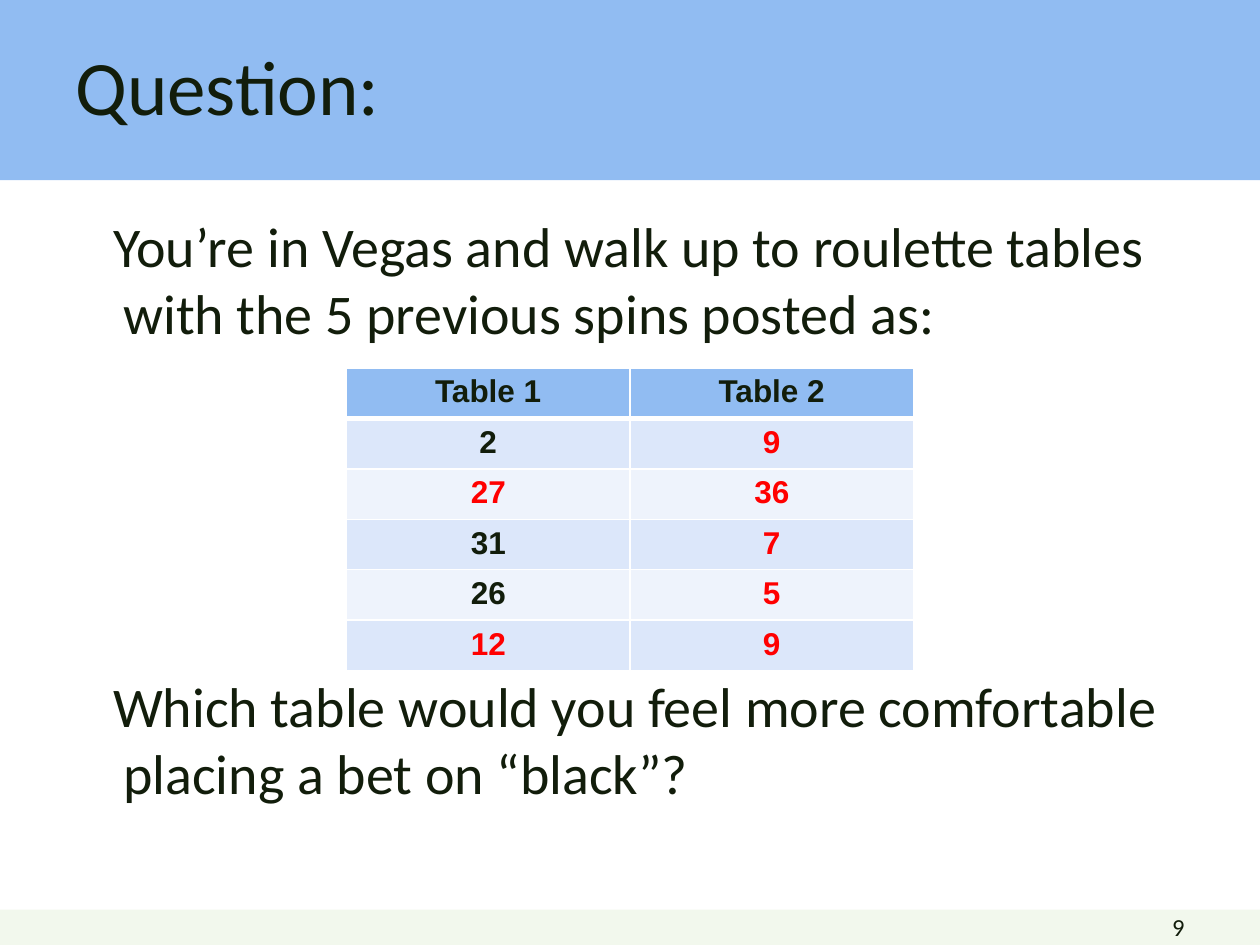
"""Build the roulette question slide with its table of previous spins."""
from lxml import etree
from pptx import Presentation
from pptx import util as u
from pptx.dml.color import RGBColor
from pptx.enum import shapes, text
from pptx.oxml.ns import qn

INK, RED, BLUE, WHITE = "121D0B", "FF0000", "91BCF2", "FFFFFF"
BANDS = ["DCE7FA", "EEF3FC"]


def paint(fmt, color):
    """Give a fill a solid colour."""
    fmt.solid()
    fmt.fore_color.rgb = RGBColor.from_string(color)


def style(p, size, font="Calibri", color=INK, bold=False):
    """Format every run of a paragraph."""
    for r in p.runs:
        r.font.size = u.Pt(size)
        r.font.name = font
        r.font.bold = bold
        paint(r.font.fill, color)


prs = Presentation()
prs.slide_width, prs.slide_height = u.Inches(10), u.Inches(7.5)
s = prs.slides.add_slide(prs.slide_layouts[6])
paint(s.background.fill, WHITE)

for top, height, color in [(0, 1.43, BLUE), (7.22, 0.28, "F2F8ED")]:
    sp = s.shapes.add_shape(shapes.MSO_SHAPE.RECTANGLE, 0, u.Inches(top),
                            prs.slide_width, u.Inches(height))
    sp.shadow.inherit = False
    paint(sp.fill, color)
    sp.line.fill.background()

texts = [
    ("Question:", 0.5, 0.28, 9.07, 0.79, 44),
    ("You’re in Vegas and walk up to roulette tables with the 5 previous spins posted as:",
     0.5, 1.63, 9.07, 1.2, 32),
    ("Which table would you feel more comfortable placing a bet on “black”?",
     0.5, 5.28, 9.07, 1.2, 32),
    ("9", 7.17, 7.19, 2.33, 0.31, 14),
]
for words, left, top, width, height, size in texts:
    sp = s.shapes.add_textbox(*map(u.Inches, (left, top, width, height)))
    tf = sp.text_frame
    tf.word_wrap = True
    tf.text = words
    p = tf.paragraphs[0]
    style(p, size)
    if size == 44:
        tf.vertical_anchor = text.MSO_ANCHOR.MIDDLE
    elif size == 32:
        pPr = p._p.get_or_add_pPr()
        pPr.set("marL", str(u.Inches(0.38)))
        pPr.set("indent", str(u.Inches(-0.08)))
    else:
        p.alignment = text.PP_ALIGN.RIGHT

rows = [("Table 1", "Table 2"), ("2", "9"), ("27", "36"),
        ("31", "7"), ("26", "5"), ("12", "9")]
red_numbers = {"5", "7", "9", "12", "27", "36"}
table = s.shapes.add_table(len(rows), 2, u.Inches(2.75), u.Inches(2.92),
                           u.Inches(4.5), u.Inches(0.37 * len(rows))).table
for i, row in enumerate(rows):
    for j, value in enumerate(row):
        cell = table.cell(i, j)
        cell.text = value
        p = cell.text_frame.paragraphs[0]
        p.alignment = text.PP_ALIGN.CENTER
        style(p, 18, "Arial", RED if value in red_numbers else INK, True)
        tcPr = cell._tc.get_or_add_tcPr()
        for side in ("L", "R", "T", "B"):
            heavy = (i, side) in [(0, "B"), (1, "T")]
            ln = etree.SubElement(tcPr, qn(f"a:ln{side}"), w=str(u.Pt(3 if heavy else 1)))
            fill = etree.SubElement(ln, qn("a:solidFill"))
            etree.SubElement(fill, qn("a:srgbClr"), val=WHITE)
        paint(cell.fill, BANDS[(i - 1) % 2] if i else BLUE)

prs.save("out.pptx")
